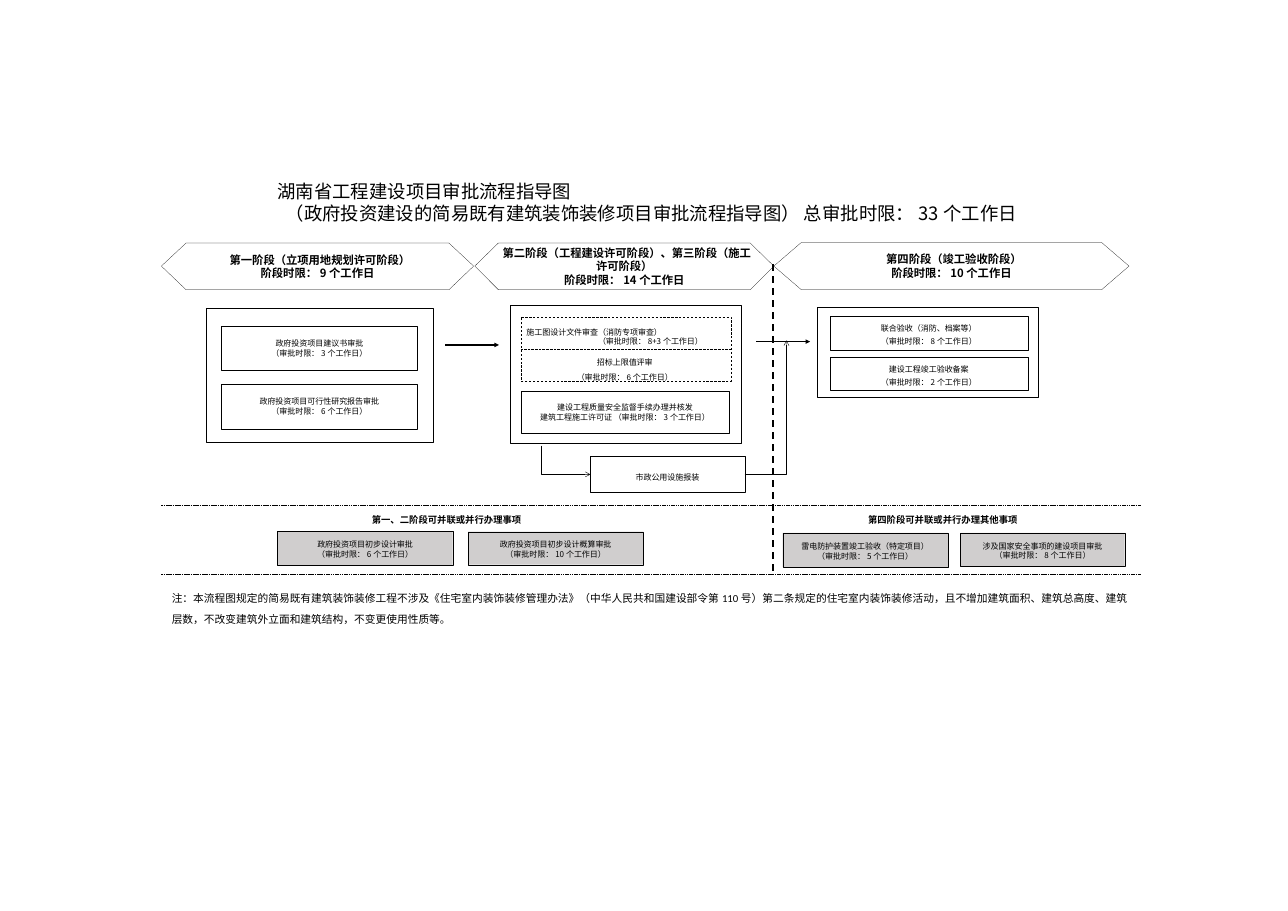
from lxml.etree import SubElement
from pptx import Presentation
from pptx.dml.color import RGBColor
from pptx.enum.dml import MSO_LINE as Dash
from pptx.enum.shapes import MSO_CONNECTOR as Connector, MSO_SHAPE as Shape
from pptx.enum.text import MSO_ANCHOR as Anchor, PP_ALIGN as Align
from pptx.oxml.ns import qn
from pptx.util import Emu, Pt

PX = 9144  # EMU per px, 100 px to the inch
SLIDE_SIZE = Emu(21383625), Emu(15119350)  # A2 paper, landscape
BLACK = RGBColor(0, 0, 0)
WHITE = RGBColor(255, 255, 255)
GREY = RGBColor(0xD0, 0xCE, 0xCE)
CJK = "Noto Sans CJK SC"
HAIRLINE = 0.25

# Content: boxes are (left, top, width, height)
TITLE = ["湖南省工程建设项目审批流程指导图",
         "（政府投资建设的简易既有建筑装饰装修项目审批流程指导图） 总审批时限：33个工作日"]
NOTE = ("注：本流程图规定的简易既有建筑装饰装修工程不涉及《住宅室内装饰装修管理办法》"
        "（中华人民共和国建设部令第110号）第二条规定的住宅室内装饰装修活动，"
        "且不增加建筑面积、建筑总高度、建筑层数，不改变建筑外立面和建筑结构，不变更使用性质等。")
STAGES = [  # box, slant, lines
    ((293, 441, 567, 85), 45, ["第一阶段（立项用地规划许可阶段）", "阶段时限：9个工作日"]),
    ((862, 441, 543, 85), 43, ["第二阶段（工程建设许可阶段）、第三阶段（施工",
                               "许可阶段）", "阶段时限：14个工作日"]),
    ((1405, 440, 645, 86), 50, ["第四阶段（竣工验收阶段）", "阶段时限：10个工作日"]),
]
FRAMES = [(374, 560, 412, 243), (927, 554, 419, 251), (1484, 557, 402, 164)]
STEPS = [  # box, line spacing in points, lines
    ((402, 592, 356, 80), None, ["政府投资项目建议书审批", "（审批时限：3个工作日）"]),
    ((402, 698, 356, 80), None, ["政府投资项目可行性研究报告审批", "（审批时限：6个工作日）"]),
    ((946, 709, 378, 78), 13.4, ["建设工程质量安全监督手续办理并核发",
                                 "建筑工程施工许可证 （审批时限：3个工作日）"]),
    ((1507, 573, 359, 62), 16.8, ["联合验收（消防、档案等）", "（审批时限：8个工作日）"]),
    ((1507, 649, 359, 59), 16.8, ["建设工程竣工验收备案", "（审批时限：2个工作日）"]),
]
REVIEW_FRAME = (946, 575, 381, 117)
DRAWING_REVIEW = ["施工图设计文件审查（消防专项审查）", "（审批时限：8+3个工作日）"]
BID_REVIEW = ["招标上限值评审", "（审批时限：6个工作日）"]
UTILITY = (1072, 828, 280, 66)
PARALLEL_HEADINGS = [((437, 928, 748, 114), "第一、二阶段可并联或并行办理事项"),
                     ((1500, 928, 424, 36), "第四阶段可并联或并行办理其他事项")]
PARALLEL_ITEMS = [
    ((504, 964, 318, 62), ["政府投资项目初步设计审批", "（审批时限：6个工作日）"]),
    ((850, 965, 318, 60), ["政府投资项目初步设计概算审批", "（审批时限：10个工作日）"]),
    ((1421, 967, 300, 62), ["雷电防护装置竣工验收（特定项目）", "（审批时限：5个工作日）"]),
    ((1744, 967, 298, 61), ["涉及国家安全事项的建设项目审批", "（审批时限：8个工作日）"]),
]
STAGE_ARROWS = [(808, 626, 906, 626), (1373, 620, 1471, 620)]
BAND_LINES = [(293, 918, 2072, 918), (293, 1042, 2072, 1042)]
STAGE_DIVIDER = (1404, 480, 1404, 1044)

presentation = Presentation()
presentation.slide_width, presentation.slide_height = SLIDE_SIZE
slide = presentation.slides.add_slide(presentation.slide_layouts[6])


def scaled(lengths):
    return [length * PX for length in lengths]


def write(shape, lines, size=10.5, font=CJK, bold=False, anchor=Anchor.MIDDLE,
          align=Align.CENTER, spacing=None, bottom=5):
    frame = shape.text_frame
    frame.word_wrap = True
    frame.vertical_anchor = anchor
    frame.margin_bottom = bottom * PX
    frame.text = "\n".join(lines)
    for paragraph in frame.paragraphs:
        paragraph.alignment = align
        if spacing:
            paragraph.line_spacing = spacing
        for run in paragraph.runs:
            run.font.size = Pt(size)
            run.font.bold = bold
            run.font.color.rgb = BLACK
            run.font.name = font
            SubElement(run._r.get_or_add_rPr(), qn("a:ea"), typeface=CJK)
    return frame.paragraphs


def indent(paragraph, left, align=Align.LEFT):
    paragraph.alignment = align
    paragraph._p.get_or_add_pPr().set("marL", str(left * PX))


def style(shape, fill=None, color=BLACK, weight=HAIRLINE):
    shape.shadow.inherit = False
    if fill is None:
        shape.fill.background()
    else:
        shape.fill.solid()
        shape.fill.fore_color.rgb = fill
    shape.line.color.rgb = color
    shape.line.width = Pt(weight)
    return shape


def rectangle(box, **look):
    return style(slide.shapes.add_shape(Shape.RECTANGLE, *scaled(box)), **look)


def text_box(box, lines, **text):
    return write(slide.shapes.add_textbox(*scaled(box)), lines, **text)


def stage_banner(box, slant):
    left, top, width, height = box
    right, bottom, middle = left + width, top + height, top + height // 2
    builder = slide.shapes.build_freeform(left + slant, top, scale=PX)
    builder.add_line_segments([(right - slant, top), (right, middle), (right - slant, bottom),
                               (left + slant, bottom), (left, middle)], close=True)
    return style(builder.convert_to_shape(), fill=WHITE)


def connect(ends, weight, dash=None, head=None, kind=Connector.STRAIGHT):
    connector = slide.shapes.add_connector(kind, *scaled(ends))
    connector.line.color.rgb = BLACK
    connector.line.width = Pt(weight)
    if dash:
        connector.line.dash_style = dash
    properties = connector._element.spPr
    if head:
        SubElement(properties.find(qn("a:ln")), qn("a:tailEnd"), type=head)
    SubElement(properties, qn("a:effectLst"))
    return connector


# Title and note
title = text_box((207, 322, 1951, 91), TITLE, size=24, anchor=Anchor.TOP)
indent(title[0], 287)
text_box((302, 1052, 1761, 130), [NOTE], size=14, font="Calibri", anchor=Anchor.TOP,
         align=Align.LEFT, spacing=1.7)

# Stage banners, frames and steps
for box, slant, lines in STAGES:
    stage = write(stage_banner(box, slant), lines, size=14.8, bold=True)
    indent(stage[0], 9, Align.CENTER)
for box in FRAMES:
    rectangle(box, weight=0.75)
for box, spacing, lines in STEPS:
    write(rectangle(box), lines, spacing=spacing and Pt(spacing))

# Dashed review frame, split in the middle
review_frame = rectangle(REVIEW_FRAME, weight=0.75)
review_frame.line.dash_style = Dash.DASH
drawing_review = text_box((946, 579, 377, 65), DRAWING_REVIEW)
indent(drawing_review[0], 0)
indent(drawing_review[1], 130)
text_box((946, 634, 377, 63), BID_REVIEW, font="Arial", spacing=Pt(20))
review_split = connect((946, 634, 1327, 634), HAIRLINE, dash=Dash.DASH)
review_split.begin_connect(review_frame, 1)
review_split.end_connect(review_frame, 3)

# Items handled in parallel
for box, heading in PARALLEL_HEADINGS:
    write(rectangle(box, color=WHITE, weight=0.75), [heading], size=12.2, font="Calibri",
          bold=True, anchor=Anchor.TOP, bottom=0)
for box, lines in PARALLEL_ITEMS:
    write(rectangle(box, fill=GREY), lines, bottom=0)

# Lines and arrows
for ends in BAND_LINES:
    connect(ends, 0.75, dash=Dash.SQUARE_DOT)
connect(STAGE_DIVIDER, 2.25, dash=Dash.DASH)
for ends in STAGE_ARROWS:
    connect(ends, 2, head="triangle")

# Utility step with its bent arrows
write(rectangle(UTILITY), ["市政公用设施报装"], font="Arial", spacing=Pt(20))
arrow_in = connect((982, 809, 1072, 861), 0.5, head="arrow", kind=Connector.ELBOW)
guides = arrow_in._element.spPr.find(qn("a:prstGeom")).get_or_add_avLst()
SubElement(guides, qn("a:gd"), name="adj1", fmla="val 0")
arrow_out = connect((1352, 861, 1428, 618), 0.5, head="arrow", kind=Connector.ELBOW)
arrow_out._element.spPr.find(qn("a:prstGeom")).set("prst", "bentConnector2")

presentation.save("out.pptx")
